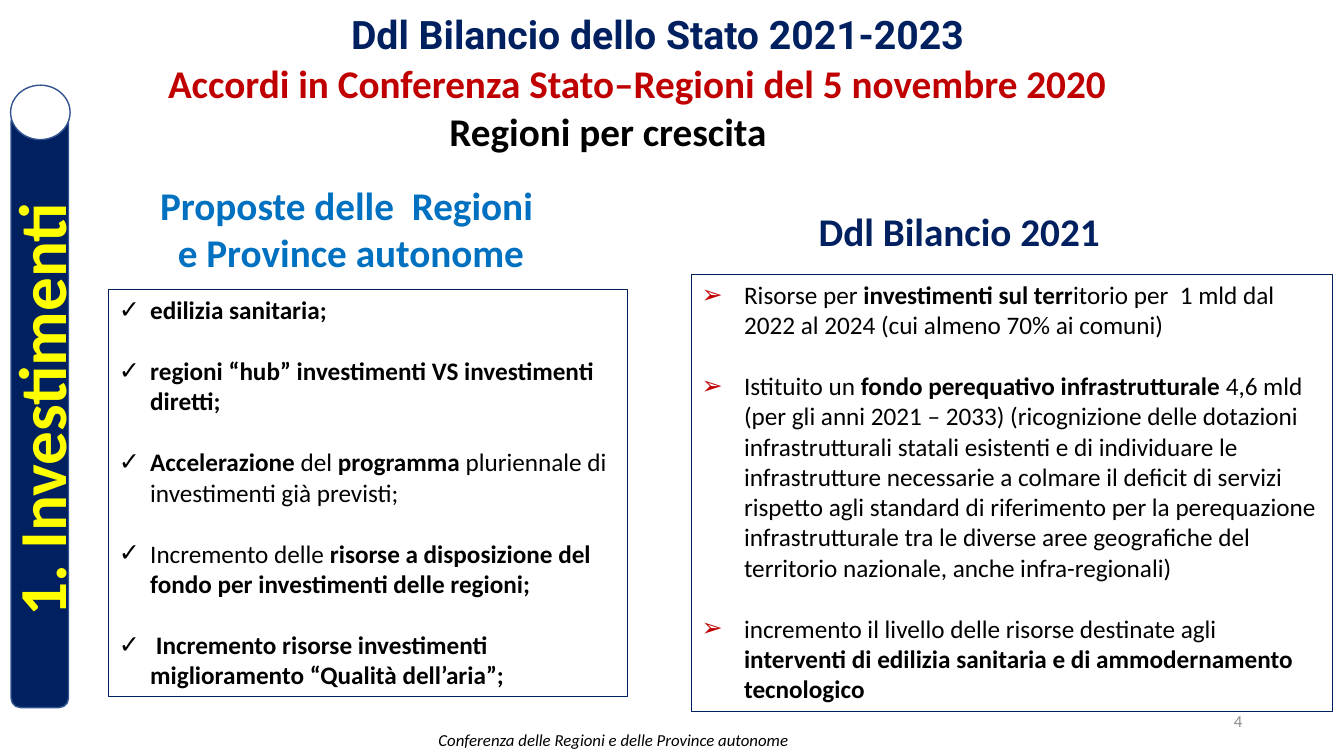
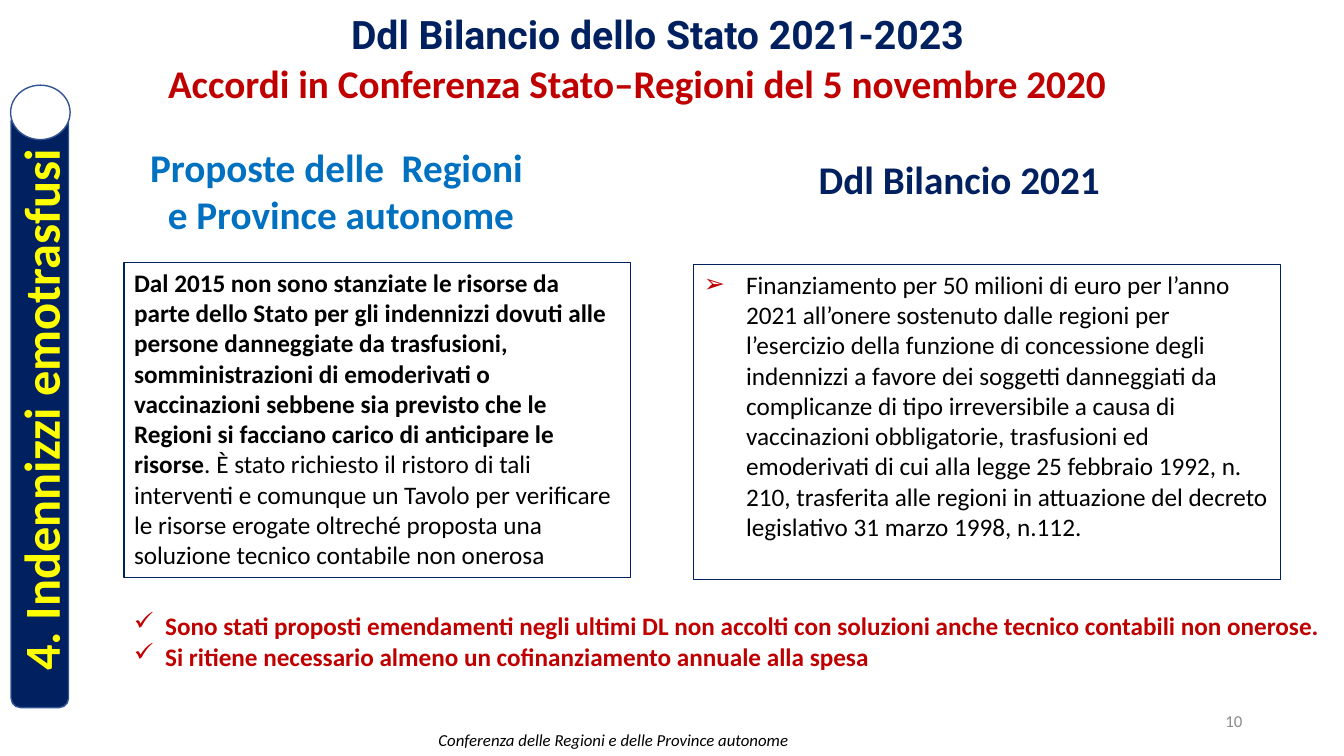
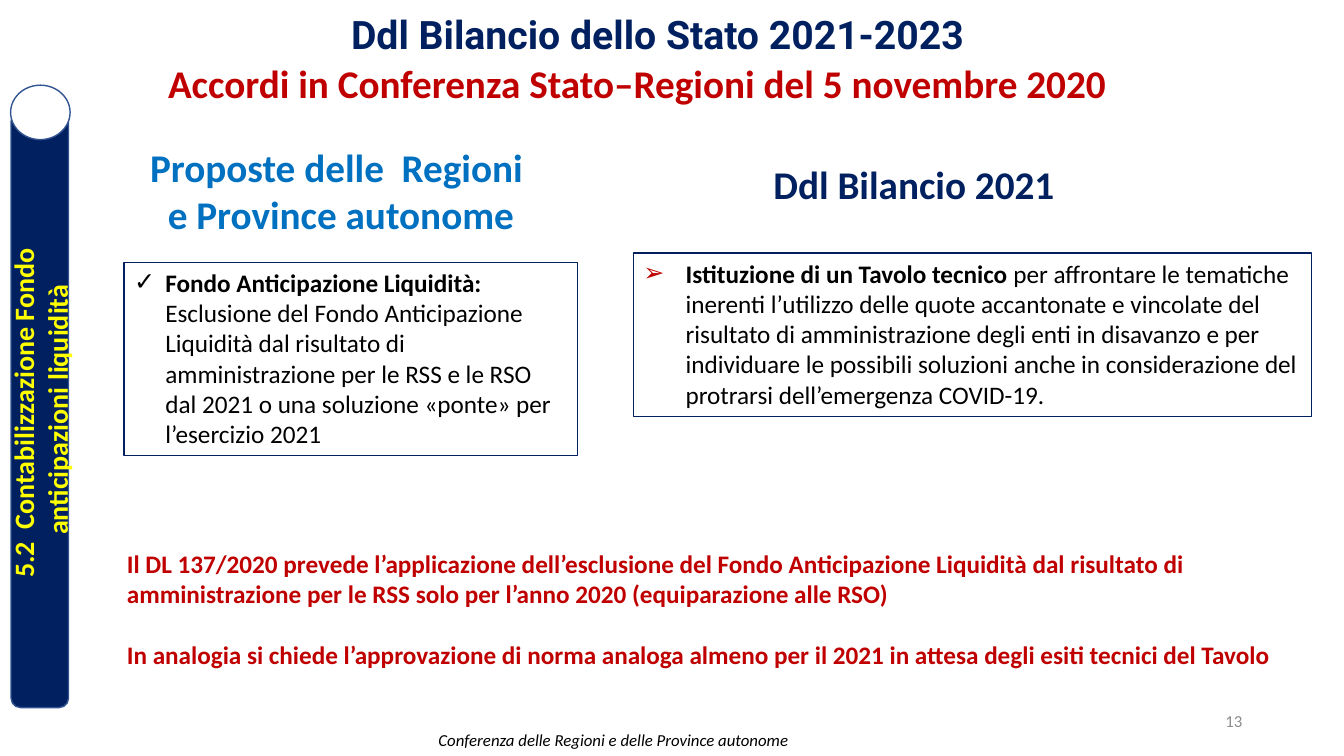
import dataclasses
import pptx
import pptx.dml.color
import pptx.enum.shapes
import pptx.enum.text
import pptx.oxml.ns
import pptx.util
from lxml import etree

Inches = pptx.util.Inches
Align = pptx.enum.text.PP_ALIGN
Anchor = pptx.enum.text.MSO_ANCHOR
Shape = pptx.enum.shapes.MSO_SHAPE


@dataclasses.dataclass(frozen=True)
class Theme:
    font: str = "Calibri"
    title_font: str = "Roboto"
    navy: str = "002060"
    red: str = "C00000"
    blue: str = "0070C0"
    yellow: str = "FFFF00"
    edge: str = "325491"
    grey: str = "8C8C8C"
    black: str = "000000"
    white: str = "FFFFFF"
    heading_size: int = 28
    body_size: int = 18
    small_size: int = 12
    blank_line: int = 22


@dataclasses.dataclass(frozen=True)
class Bullet:
    char: str
    indent: float
    color: str = ""


THEME = Theme()
CHECK = Bullet("✓", 0.31)
ARROW = Bullet("➢", 0.42, THEME.red)


def rgb(color):
    return pptx.dml.color.RGBColor.from_string(color)


def place(shape, at):
    shape.left, shape.top, shape.width, shape.height = map(Inches, at)


def set_bullet(para, bullet):
    props = para._p.get_or_add_pPr()
    indent = Inches(bullet.indent) if bullet else 0
    props.set("marL", str(indent))
    props.set("indent", str(-indent))
    qn = pptx.oxml.ns.qn
    if not bullet:
        etree.SubElement(props, qn("a:buNone"))
        return
    if bullet.color:
        tint = etree.SubElement(props, qn("a:buClr"))
        etree.SubElement(tint, qn("a:srgbClr"), val=bullet.color)
    etree.SubElement(props, qn("a:buChar"), char=bullet.char)


def write(shape, text, size=THEME.body_size, color=THEME.black, font=THEME.font,
          bold=False, italic=False, align=Align.LEFT, anchor=Anchor.TOP,
          bullet=None, gap=0):
    """Fill a shape: one paragraph per line, ** switches bold on and off."""
    frame = shape.text_frame
    frame.word_wrap = True
    frame.auto_size = pptx.enum.text.MSO_AUTO_SIZE.NONE
    frame.vertical_anchor = anchor
    for row, line in enumerate(text.split("\n")):
        para = frame.add_paragraph() if row else frame.paragraphs[0]
        set_bullet(para, bullet)
        para.alignment = align
        para.space_before = pptx.util.Pt(gap if row else 0)
        for part, words in enumerate(line.split("**")):
            if not words:
                continue
            span = para.add_run()
            span.text = words
            span.font.name = font
            span.font.size = pptx.util.Pt(size)
            span.font.bold = bold or part % 2 == 1
            span.font.italic = italic
            span.font.color.rgb = rgb(color)


class Deck:
    def __init__(self, theme):
        self.theme = theme
        self.show = pptx.Presentation()
        self.show.slide_width = Inches(13.33)
        self.show.slide_height = Inches(7.5)
        self.page = None

    def add_page(self, number, topic, topic_size):
        """Start a comparison page with its title, side band and footer."""
        theme = self.theme
        self.page = self.show.slides.add_slide(self.show.slide_layouts[4])
        title = self.page.shapes.title
        place(title, (2.02, 0.05, 9, 0.52))
        write(title, "Ddl Bilancio dello Stato 2021-2023", size=theme.heading_size,
              color=theme.navy, font=theme.title_font, bold=True, align=Align.CENTER)
        self.subtitle((1.29, 0.54, 10.05, 0.57),
                      "Accordi in Conferenza Stato–Regioni del 5 novembre 2020", theme.red)
        band = self.shape(Shape.ROUNDED_RECTANGLE, (-2.56, 3.78, 5.91, 0.57),
                          theme.navy, theme.edge, rotation=270)
        write(band, topic, size=topic_size, color=theme.yellow, bold=True,
              align=Align.CENTER, anchor=Anchor.MIDDLE)
        self.shape(Shape.FLOWCHART_CONNECTOR, (0.13, 0.82, 0.54, 0.59),
                   theme.white, theme.edge, rotation=270)
        footer = self.shape(Shape.RECTANGLE, (3.48, 7.23, 5.21, 0.22), theme.white)
        write(footer, "Conferenza delle Regioni e delle Province autonome",
              size=theme.small_size, italic=True, align=Align.CENTER, anchor=Anchor.MIDDLE)
        self.text((9.42, 6.95, 3, 0.4), str(number), size=theme.small_size,
                  color=theme.grey, align=Align.RIGHT, anchor=Anchor.MIDDLE)

    def shape(self, kind, at, fill, line="", rotation=0):
        shape = self.page.shapes.add_shape(kind, *map(Inches, at))
        shape.shadow.inherit = False
        shape.rotation = rotation
        shape.fill.solid()
        shape.fill.fore_color.rgb = rgb(fill)
        if line:
            shape.line.color.rgb = rgb(line)
            shape.line.width = pptx.util.Pt(1)
        else:
            shape.line.fill.background()
        return shape

    def text(self, at, text, **style):
        write(self.page.shapes.add_textbox(*map(Inches, at)), text, **style)

    def subtitle(self, at, text, color):
        self.text(at, text, size=self.theme.heading_size, color=color, bold=True,
                  align=Align.CENTER)

    def note(self, at, text, **style):
        self.text(at, text, color=self.theme.red, bold=True, **style)

    def headings(self, proposals_at, budget_at):
        theme = self.theme
        left, right = self.page.placeholders[1], self.page.placeholders[3]
        place(left, (*proposals_at, 6.12, 1.04))
        write(left, "Proposte delle  Regioni \ne Province autonome", size=theme.heading_size,
              color=theme.blue, bold=True, align=Align.CENTER)
        place(right, (*budget_at, 4.15, 0.57))
        write(right, "Ddl Bilancio 2021", size=theme.heading_size, color=theme.navy, bold=True)

    def framed(self, slot, at, text, bullet):
        box = self.page.placeholders[slot]
        place(box, at)
        box.line.color.rgb = rgb(self.theme.navy)
        box.line.width = pptx.util.Pt(0.75)
        write(box, text, bullet=bullet, gap=self.theme.blank_line)

    def proposals(self, at, text, bullet=CHECK):
        self.framed(2, at, text, bullet)

    def budget(self, at, text):
        self.framed(4, at, text, ARROW)


def investments(deck):
    deck.add_page(4, "1. Investimenti", 48)
    deck.subtitle((2.7, 1.02, 6.66, 0.57), "Regioni per crescita", deck.theme.black)
    deck.headings((0.42, 1.75), (8.02, 2.01))
    deck.proposals(
        (1.08, 2.87, 5.14, 4.04),
        "**edilizia sanitaria;**\n"
        "**regioni “hub” investimenti VS investimenti diretti;**\n"
        "**Accelerazione** del **programma** pluriennale di investimenti già previsti;\n"
        "Incremento delle **risorse a disposizione del fondo per investimenti delle regioni;**\n"
        "** Incremento risorse investimenti miglioramento “Qualità dell’aria”;**")
    deck.budget(
        (6.86, 2.72, 6.36, 4.34),
        "Risorse per **investimenti sul terr**itorio per  1 mld dal 2022 al 2024 "
        "(cui almeno 70% ai comuni)\n"
        "Istituito un **fondo perequativo infrastrutturale **4,6 mld (per gli anni 2021 – 2033) "
        "(ricognizione delle dotazioni infrastrutturali statali esistenti e di individuare le "
        "infrastrutture necessarie a colmare il deficit di servizi rispetto agli standard di "
        "riferimento per la perequazione infrastrutturale tra le diverse aree geografiche del "
        "territorio nazionale, anche infra-regionali)\n"
        "incremento il livello delle risorse destinate agli **interventi di edilizia sanitaria "
        "e di ammodernamento tecnologico**")


def compensation(deck):
    deck.add_page(10, "4. Indennizzi emotrasfusi", 36)
    deck.headings((0.32, 1.37), (8.02, 1.49))
    deck.proposals(
        (1.23, 2.6, 5.02, 3.13),
        "**Dal 2015 non sono stanziate le risorse da parte dello Stato per gli indennizzi dovuti "
        "alle persone danneggiate da trasfusioni, somministrazioni di emoderivati o vaccinazioni "
        "sebbene sia previsto che le Regioni si facciano carico di anticipare le risorse**. "
        "È stato richiesto il ristoro di tali interventi e comunque un Tavolo per verificare le "
        "risorse erogate oltreché proposta una soluzione tecnico contabile non onerosa",
        bullet=None)
    deck.budget(
        (6.88, 2.62, 5.82, 3.13),
        "Finanziamento per 50 milioni di euro per l’anno 2021 all’onere sostenuto dalle regioni "
        "per l’esercizio della funzione di concessione degli indennizzi a favore dei soggetti "
        "danneggiati da complicanze di tipo irreversibile a causa di vaccinazioni obbligatorie, "
        "trasfusioni ed emoderivati di cui alla legge 25 febbraio 1992, n. 210, trasferita alle "
        "regioni in attuazione del decreto legislativo 31 marzo 1998, n.112.")
    deck.note(
        (1.23, 6.01, 11.99, 0.71),
        "Sono stati proposti emendamenti negli ultimi DL non accolti con soluzioni anche tecnico "
        "contabili non onerose.\n"
        "Si ritiene necessario almeno un cofinanziamento annuale alla spesa", bullet=CHECK)


def liquidity(deck):
    deck.add_page(13, "5.2  Contabilizzazione Fondo \nanticipazioni liquidità", 20)
    deck.headings((0.32, 1.37), (7.57, 1.54))
    deck.proposals(
        (1.23, 2.6, 4.5, 1.92),
        "**Fondo Anticipazione Liquidità: **Esclusione del Fondo Anticipazione Liquidità dal "
        "risultato di amministrazione per le RSS e le RSO dal 2021 o una soluzione «ponte» per "
        "l’esercizio 2021")
    deck.budget(
        (6.28, 2.51, 6.73, 1.62),
        "**Istituzione di un Tavolo tecnico **per affrontare le tematiche inerenti l’utilizzo "
        "delle quote accantonate e vincolate del risultato di amministrazione degli enti in "
        "disavanzo e per individuare le possibili soluzioni anche in considerazione del protrarsi "
        "dell’emergenza COVID-19.")
    deck.note(
        (1.16, 5.39, 11.58, 1.31),
        "Il DL 137/2020 prevede l’applicazione dell’esclusione del Fondo Anticipazione Liquidità "
        "dal risultato di amministrazione per le RSS solo per l’anno 2020 (equiparazione alle "
        "RSO)\n"
        "In analogia si chiede l’approvazione di norma analoga almeno per il 2021 in attesa degli "
        "esiti tecnici del Tavolo", gap=deck.theme.blank_line)


def main():
    deck = Deck(THEME)
    for build in (investments, compensation, liquidity):
        build(deck)
    deck.show.save("out.pptx")


if __name__ == "__main__":
    main()
